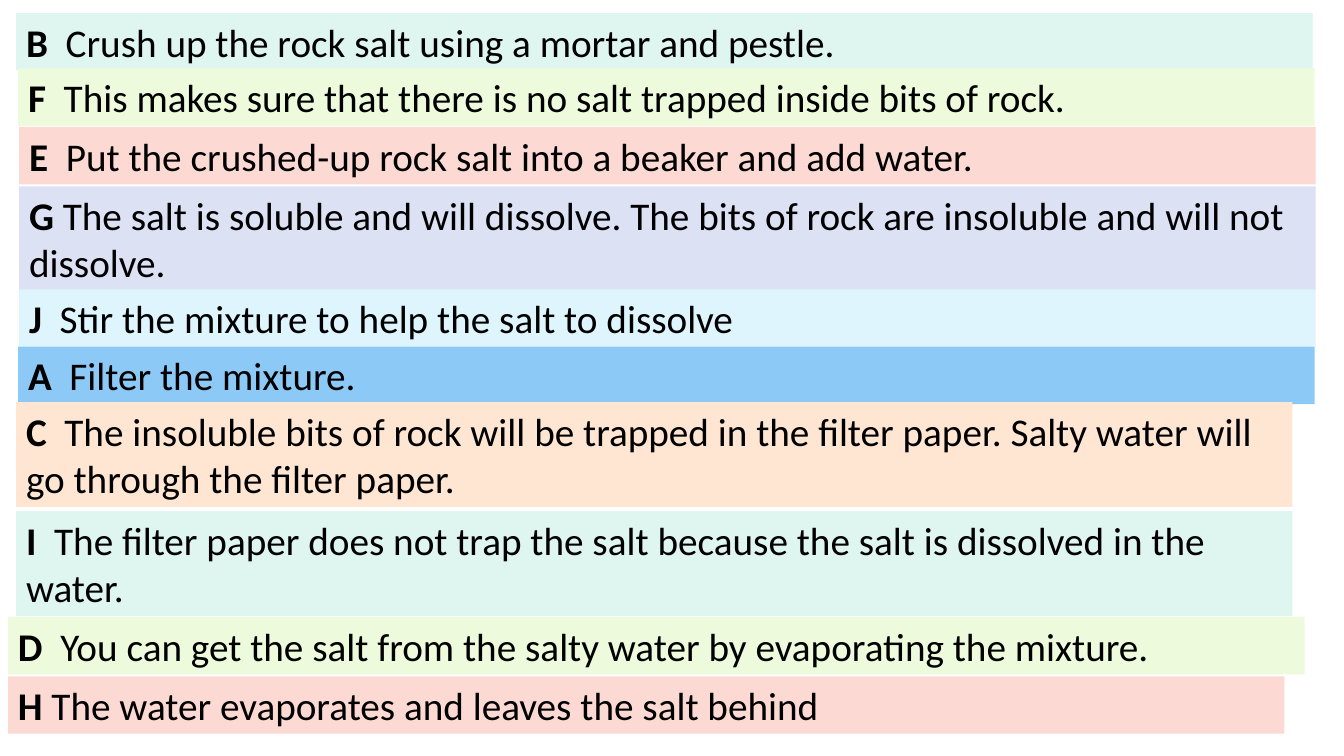
from pptx import Presentation
from pptx.dml.color import RGBColor
from pptx.enum.text import MSO_AUTO_SIZE
from pptx.util import Inches, Pt

COLORS = {
    "text": "000000",
    "mint": "DFF5EF",
    "lime": "EDFBDC",
    "rose": "FCD9D3",
    "lavender": "DCE1F4",
    "ice": "DFF5FD",
    "blue": "8CC9F7",
    "peach": "FFE6D3",
}
ONE_LINE, TWO_LINES = 0.57, 1.04
WIDE, NARROW = 12.86, 12.66

STEPS = [
    ("B ", " Crush up the rock salt using a mortar and pestle.",
     "mint", (0.16, 0.13, WIDE, ONE_LINE)),
    ("F", "  This makes sure that there is no salt trapped inside bits of rock.",
     "lime", (0.18, 0.68, WIDE, ONE_LINE)),
    ("E", "  Put the crushed-up rock salt into a beaker and add water.",
     "rose", (0.19, 1.26, WIDE, ONE_LINE)),
    ("G ", "The salt is soluble and will dissolve. The bits of rock are insoluble and will not dissolve.",
     "lavender", (0.19, 1.85, WIDE, TWO_LINES)),
    ("J", "  Stir the mixture to help the salt to dissolve",
     "ice", (0.19, 2.87, WIDE, ONE_LINE)),
    ("A", "  Filter the mixture.",
     "blue", (0.18, 3.44, WIDE, ONE_LINE)),
    ("C ", " The insoluble bits of rock will be trapped in the filter paper. "
     "Salty water will go through the filter paper.",
     "peach", (0.16, 3.99, NARROW, TWO_LINES)),
    ("I  ", "The filter paper does not trap the salt because the salt is dissolved in the water.",
     "mint", (0.16, 5.07, NARROW, TWO_LINES)),
    ("D", "  You can get the salt from the salty water by evaporating the mixture.",
     "lime", (0.08, 6.12, WIDE, ONE_LINE)),
    ("H", " The water evaporates and leaves the salt behind",
     "rose", (0.08, 6.71, NARROW, ONE_LINE)),
]


def add_step(slide, letter, sentence, color, box):
    """Add one coloured strip with a bold letter and its sentence."""
    strip = slide.shapes.add_textbox(*map(Inches, box))
    strip.fill.solid()
    strip.fill.fore_color.rgb = RGBColor.from_string(COLORS[color])
    frame = strip.text_frame
    frame.word_wrap = True
    frame.auto_size = MSO_AUTO_SIZE.SHAPE_TO_FIT_TEXT
    paragraph = frame.paragraphs[0]
    paragraph.font.name = "Calibri"
    paragraph.font.size = Pt(28)
    paragraph.font.color.rgb = RGBColor.from_string(COLORS["text"])
    for text, bold in ((letter, True), (sentence, False)):
        run = paragraph.add_run()
        run.text = text
        run.font.bold = bold


def main():
    """Build the slide of ordered steps and save it."""
    presentation = Presentation()
    presentation.slide_width = Inches(13.33)
    presentation.slide_height = Inches(7.5)
    slide = presentation.slides.add_slide(presentation.slide_layouts[6])
    for step in STEPS:
        add_step(slide, *step)
    presentation.save("out.pptx")


if __name__ == "__main__":
    main()
